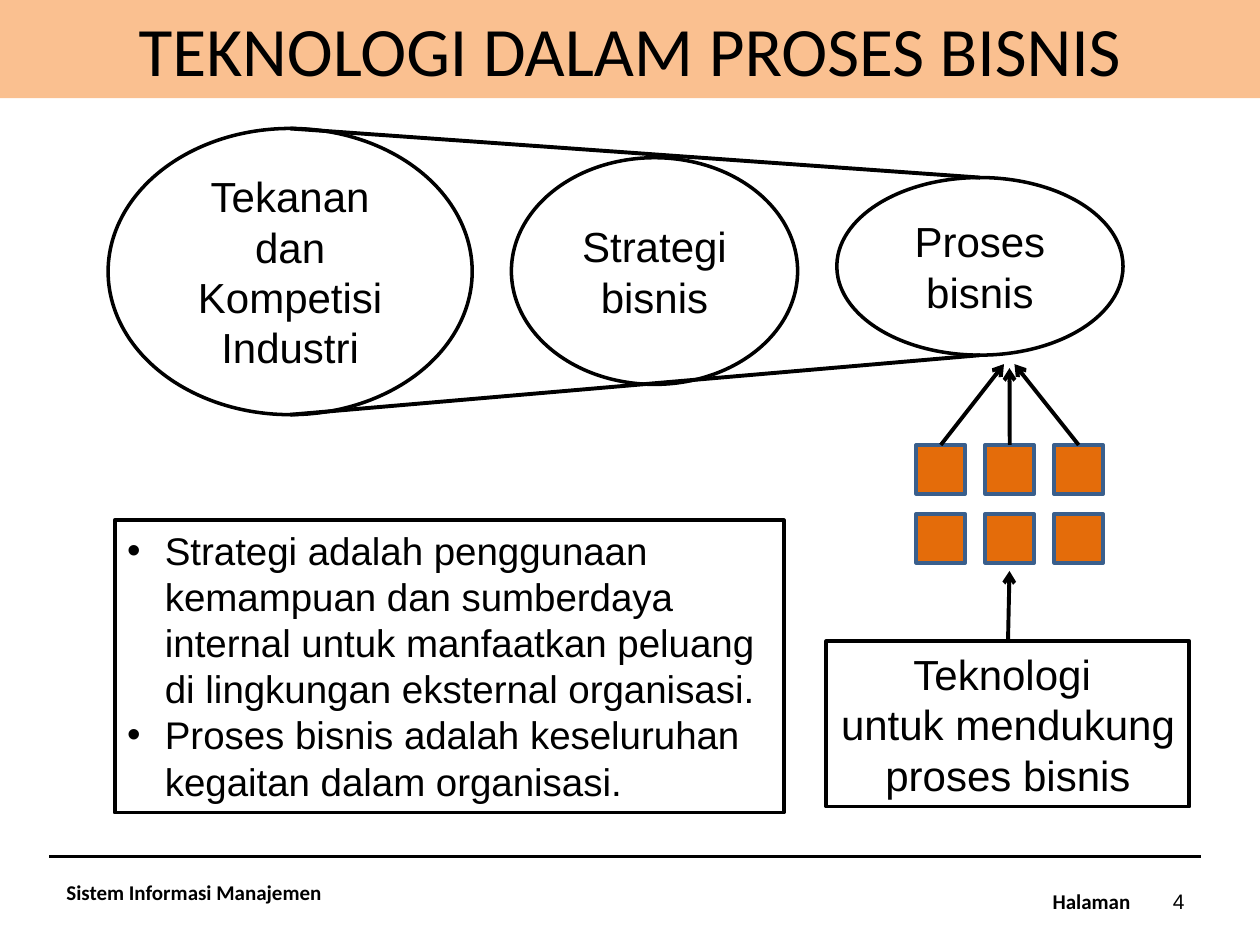
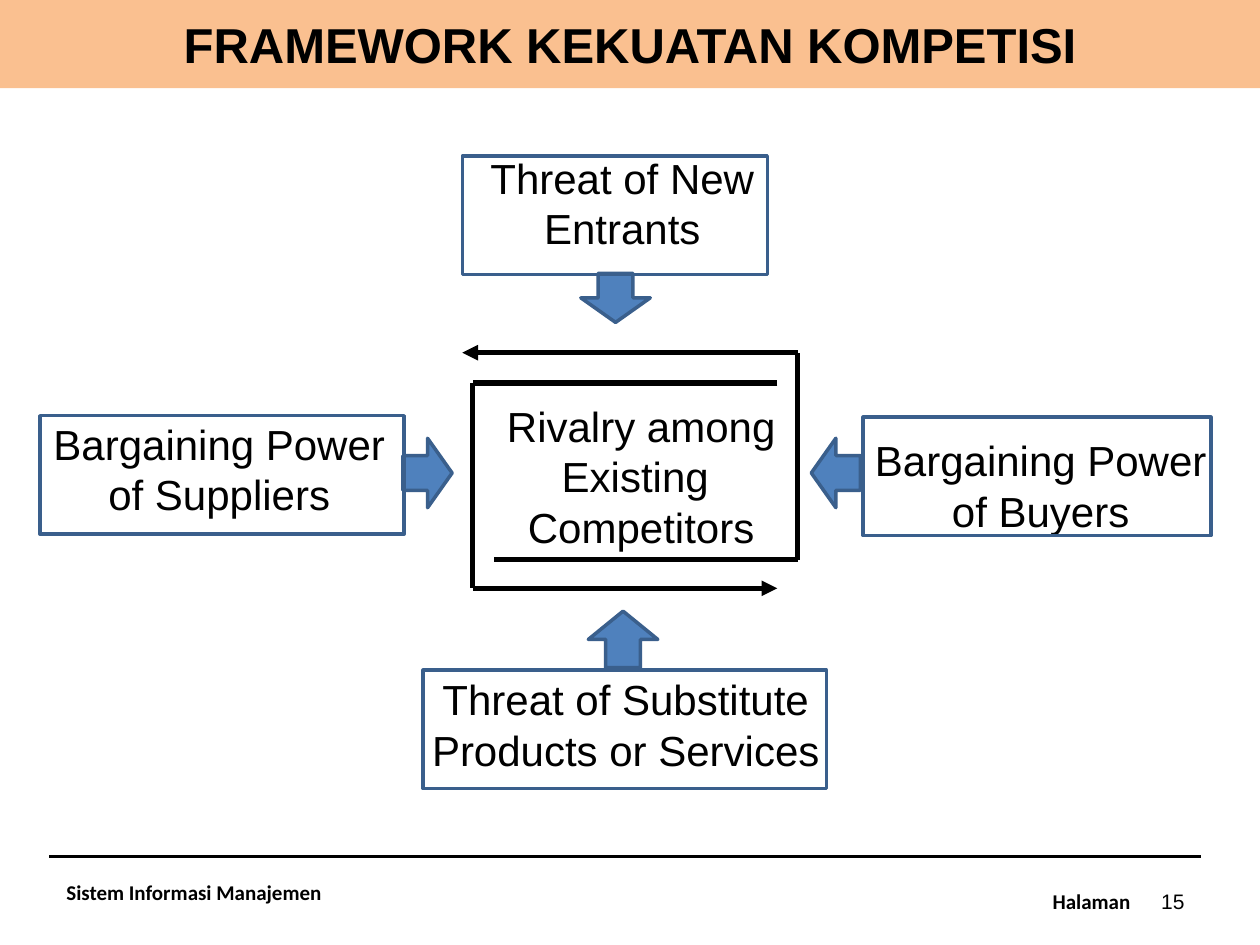
"""Build two slides on technology in business processes and competitive forces."""
import dataclasses

import pptx
import pptx.dml.color
import pptx.enum.shapes
import pptx.enum.text
import pptx.oxml.xmlchemy
import pptx.util

Cm = pptx.util.Cm
Pt = pptx.util.Pt
SHAPE = pptx.enum.shapes.MSO_SHAPE
ALIGN = pptx.enum.text.PP_ALIGN
ANCHOR = pptx.enum.text.MSO_ANCHOR


@dataclasses.dataclass(frozen=True)
class Theme:
    black: str = "000000"
    band: str = "FAC090"
    orange: str = "E46C0A"
    blue: str = "4F81BD"
    edge: str = "3A5F8C"
    sans: str = "Arial"
    heading: str = "Calibri"
    label_size: float = 24
    list_size: float = 22
    footer_size: float = 12
    edge_width: float = 2
    line_width: float = 2.25
    loop_width: float = 3
    rule_width: float = 1.5


THEME = Theme()
PAGE_SIZE = (25.4, 19.05)

PROCESS_TITLE = dict(text="TEKNOLOGI DALAM PROSES BISNIS", height=1.98, size=39.6,
                     font=THEME.heading, bold=False)
FORCES_TITLE = dict(text="FRAMEWORK KEKUATAN KOMPETISI", height=1.78, size=28,
                    font=THEME.sans, bold=True)

FOOTER_RULE = ((0.99, 17.27), (24.21, 17.27))
FOOTER_COURSE = ("Sistem Informasi Manajemen", (1.09, 17.48, 6.45, 1.02))
FOOTER_LABEL = ("Halaman", (20.65, 17.65, 2.39, 1.02))
FOOTER_NUMBER = (23.01, 17.65, 1.12, 1.02)

STAGES = [
    ("Tekanan dan Kompetisi Industri", (2.18, 2.59, 7.34, 5.77)),
    ("Strategi bisnis", (10.31, 3.18, 5.77, 4.57)),
    ("Proses\nbisnis", (16.87, 3.58, 5.77, 3.58)),
]
TILE_ORIGIN = (18.47, 8.97)
TILE_SIZE = 0.99
TILE_PITCH = 1.39
TILE_ROWS, TILE_COLUMNS = 2, 3
TILE_ARROW_TIPS = [(20.24, 7.34), (20.35, 7.42), (20.45, 7.34)]
TECHNOLOGY = ("Teknologi \nuntuk mendukung\nproses bisnis", (16.66, 12.93, 7.32, 3.33))
TECHNOLOGY_ARROW_TIP = (20.35, 11.51)
DEFINITIONS = [
    "Strategi adalah penggunaan kemampuan dan sumberdaya internal untuk manfaatkan "
    "peluang di lingkungan eksternal organisasi.",
    "Proses bisnis adalah keseluruhan kegaitan dalam organisasi.",
]
DEFINITIONS_AREA = (2.31, 10.49, 13.49, 5.89)
BULLET_INDENT = 0.76

RIVALRY = ("Rivalry among\nExisting \nCompetitors", (9.93, 7.95, 5.99, 3.33))
RIVALRY_LOOPS = [
    [(15.67, 7.72), (9.53, 7.72), (9.53, 11.86), (15.67, 11.86)],
    [(9.96, 11.28), (16.08, 11.28), (16.08, 7.11), (9.32, 7.11)],
]
FORCES = [
    dict(text="Threat of New\nEntrants", label=(9.6, 2.95, 5.89, 2.31),
         frame=(9.32, 3.15, 6.15, 2.39), arrow=(11.71, 5.51, 1.4, 0.99), turn=0),
    dict(text="Bargaining Power\nof Buyers", label=(17.35, 8.64, 7.26, 2.31),
         frame=(17.4, 8.41, 7.01, 2.39), arrow=(16.15, 9.04, 1.4, 0.99), turn=90),
    dict(text="Threat of Substitute\nProducts or Services", label=(8.41, 13.46, 8.41, 2.31),
         frame=(8.53, 13.51, 8.13, 2.39), arrow=(11.86, 12.32, 1.4, 1.14), turn=180),
    dict(text="Bargaining Power\nof Suppliers", label=(0.79, 8.31, 7.26, 2.31),
         frame=(0.81, 8.38, 7.34, 2.39), arrow=(7.92, 9.04, 1.4, 0.99), turn=270),
]


def color(value):
    return pptx.dml.color.RGBColor.from_string(value)


def lengths(values):
    return [Cm(value) for value in values]


def new_element(tag, **attributes):
    element = pptx.oxml.xmlchemy.OxmlElement(tag)
    for name, value in attributes.items():
        element.set(name, value)
    return element


def write(box, text, size, font=THEME.sans, bold=False, align=ALIGN.CENTER,
          anchor=ANCHOR.MIDDLE, wrap=True):
    frame = box.text_frame
    frame.text = text
    frame.auto_size = pptx.enum.text.MSO_AUTO_SIZE.NONE
    frame.word_wrap = wrap
    frame.vertical_anchor = anchor
    for para in frame.paragraphs:
        para.alignment = align
        for span in para.runs:
            span.font.name = font
            span.font.size = Pt(size)
            span.font.bold = bold
            span.font.color.rgb = color(THEME.black)


def outline(shape, line, width):
    shape.line.color.rgb = color(line)
    shape.line.width = Pt(width)


def add_figure(page, kind, area, line, width=THEME.edge_width, fill=None):
    shape = page.shapes.add_shape(kind, *lengths(area))
    shape.shadow.inherit = False
    if fill:
        shape.fill.solid()
        shape.fill.fore_color.rgb = color(fill)
    else:
        shape.fill.background()
    outline(shape, line, width)
    return shape


def add_label(page, text, area, size=THEME.label_size, **style):
    box = page.shapes.add_textbox(*lengths(area))
    write(box, text, size, **style)


def add_line(page, start, end, width=THEME.line_width, head=None):
    line = page.shapes.add_connector(pptx.enum.shapes.MSO_CONNECTOR.STRAIGHT,
                                     *lengths(start + end))
    outline(line, THEME.black, width)
    properties = line._element.spPr
    if head:
        properties.get_or_add_ln().append(new_element("a:tailEnd", type=head))
    properties.append(new_element("a:effectLst"))
    return line


def top_middle(area):
    left, top, width, _ = area
    return left + width / 2, top


def bottom_middle(area):
    left, top, width, height = area
    return left + width / 2, top + height


def add_page(deck, layout, title, number):
    page = deck.slides.add_slide(deck.slide_layouts.get_by_name(layout))
    band = page.shapes.title
    band.left, band.top, band.width, band.height = lengths((0, 0, PAGE_SIZE[0], title["height"]))
    band.fill.solid()
    band.fill.fore_color.rgb = color(THEME.band)
    write(band, title["text"], title["size"], title["font"], title["bold"])

    add_line(page, *FOOTER_RULE, width=THEME.rule_width)
    heading = dict(size=THEME.footer_size, font=THEME.heading, bold=True)
    add_label(page, *FOOTER_COURSE, align=ALIGN.LEFT, **heading)
    add_label(page, *FOOTER_LABEL, align=ALIGN.RIGHT, **heading)
    add_label(page, number, FOOTER_NUMBER, THEME.footer_size, align=ALIGN.RIGHT)
    return page


def add_definitions(page):
    body = page.placeholders[1]
    body.left, body.top, body.width, body.height = lengths(DEFINITIONS_AREA)
    outline(body, THEME.black, THEME.line_width)
    write(body, "\n".join(DEFINITIONS), THEME.list_size, align=ALIGN.LEFT, anchor=ANCHOR.TOP)
    for para in body.text_frame.paragraphs:
        para.space_before = Pt(0)
        properties = para._p.get_or_add_pPr()
        properties.set("marL", str(Cm(BULLET_INDENT)))
        properties.set("indent", str(-Cm(BULLET_INDENT)))
        properties.append(new_element("a:buChar", char="•"))


def add_tiles(page):
    for row in range(TILE_ROWS):
        for column in range(TILE_COLUMNS):
            area = (TILE_ORIGIN[0] + column * TILE_PITCH, TILE_ORIGIN[1] + row * TILE_PITCH,
                    TILE_SIZE, TILE_SIZE)
            tile = add_figure(page, SHAPE.RECTANGLE, area, THEME.edge, fill=THEME.orange)
            if row == 0:
                arrow = add_line(page, top_middle(area), TILE_ARROW_TIPS[column], head="arrow")
                arrow.begin_connect(tile, 0)


def build_process_page(deck):
    page = add_page(deck, "Title and Content", PROCESS_TITLE, "4")
    ellipses = []
    for text, area in STAGES:
        ellipse = add_figure(page, SHAPE.OVAL, area, THEME.black)
        write(ellipse, text, THEME.label_size)
        ellipses.append(ellipse)
    first, last = STAGES[0][1], STAGES[-1][1]
    upper = add_line(page, top_middle(first), top_middle(last))
    upper.begin_connect(ellipses[0], 0)
    upper.end_connect(ellipses[-1], 0)
    add_line(page, bottom_middle(first), bottom_middle(last))

    add_tiles(page)
    text, area = TECHNOLOGY
    box = add_figure(page, SHAPE.RECTANGLE, area, THEME.black, THEME.line_width)
    write(box, text, THEME.label_size, wrap=False)
    arrow = add_line(page, top_middle(area), TECHNOLOGY_ARROW_TIP, head="arrow")
    arrow.begin_connect(box, 0)
    add_definitions(page)


def build_forces_page(deck):
    page = add_page(deck, "Title Only", FORCES_TITLE, "15")
    add_label(page, *RIVALRY, anchor=ANCHOR.TOP, wrap=False)
    for points in RIVALRY_LOOPS:
        for start, end in zip(points, points[1:]):
            head = "triangle" if end == points[-1] else None
            add_line(page, start, end, THEME.loop_width, head)
    for force in FORCES:
        add_label(page, force["text"], force["label"], anchor=ANCHOR.TOP, wrap=False)
        arrow = add_figure(page, SHAPE.DOWN_ARROW, force["arrow"], THEME.edge, fill=THEME.blue)
        arrow.rotation = force["turn"]
        add_figure(page, SHAPE.RECTANGLE, force["frame"], THEME.edge)


def main():
    deck = pptx.Presentation()
    deck.slide_width, deck.slide_height = lengths(PAGE_SIZE)
    build_process_page(deck)
    build_forces_page(deck)
    deck.save("out.pptx")


if __name__ == "__main__":
    main()
